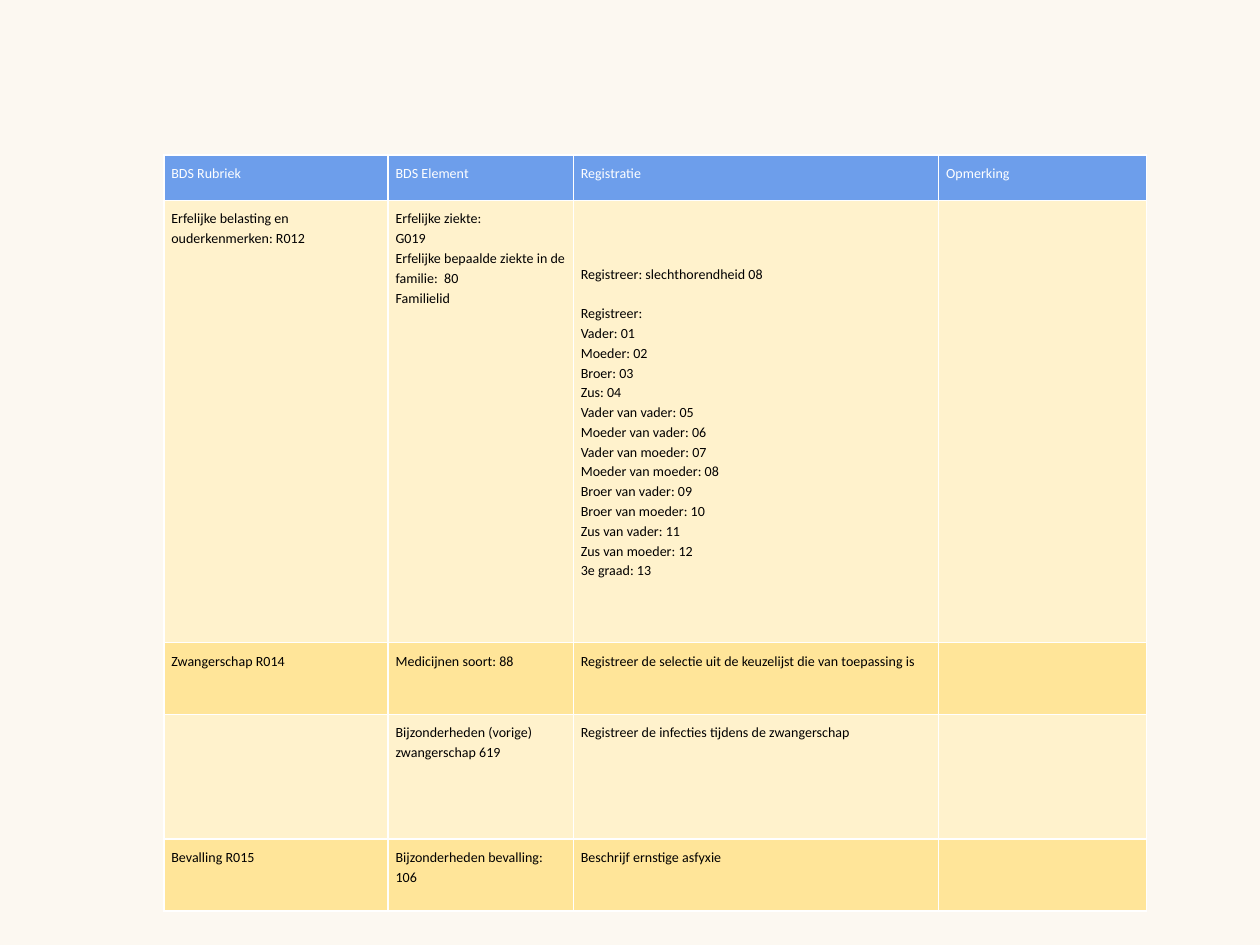
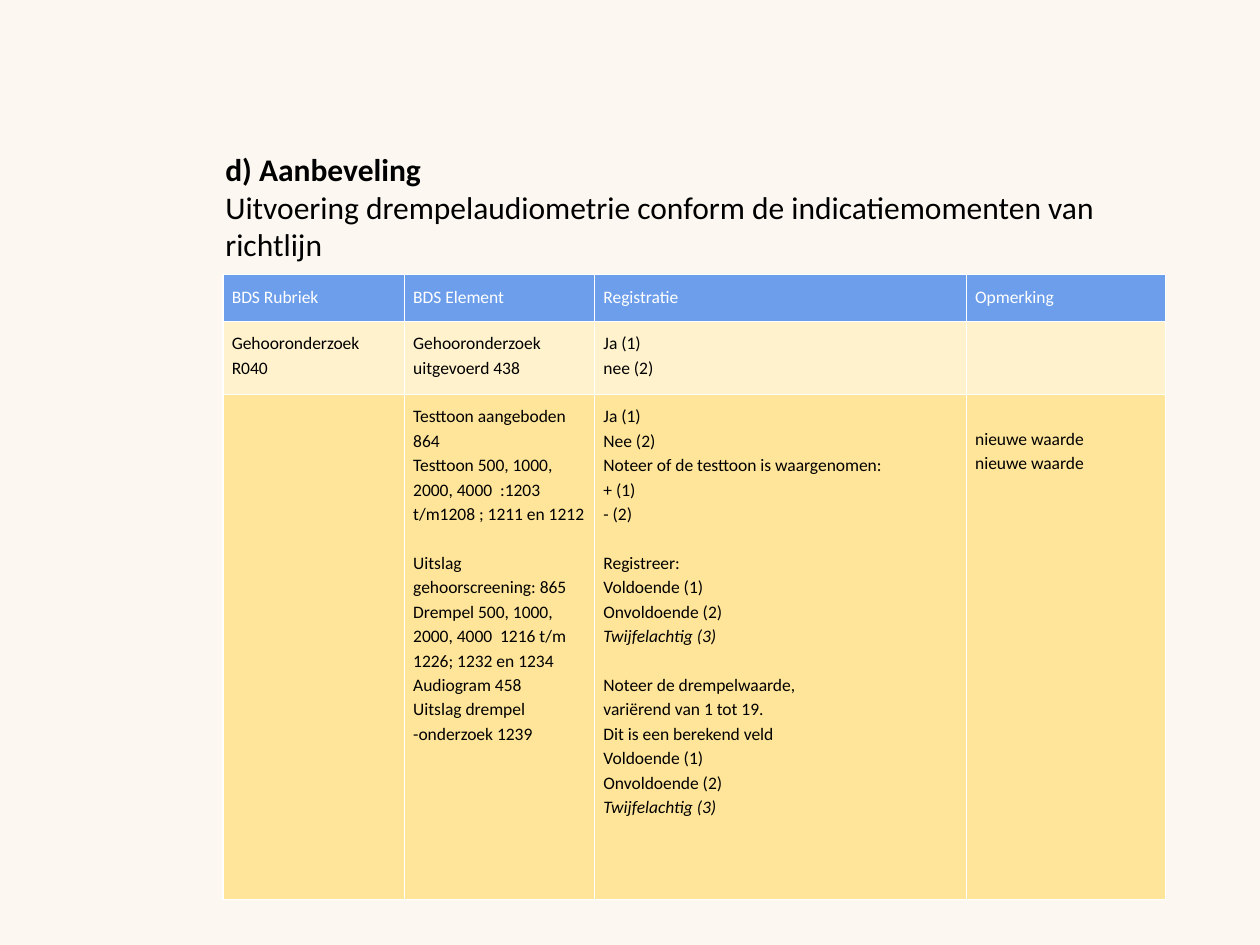
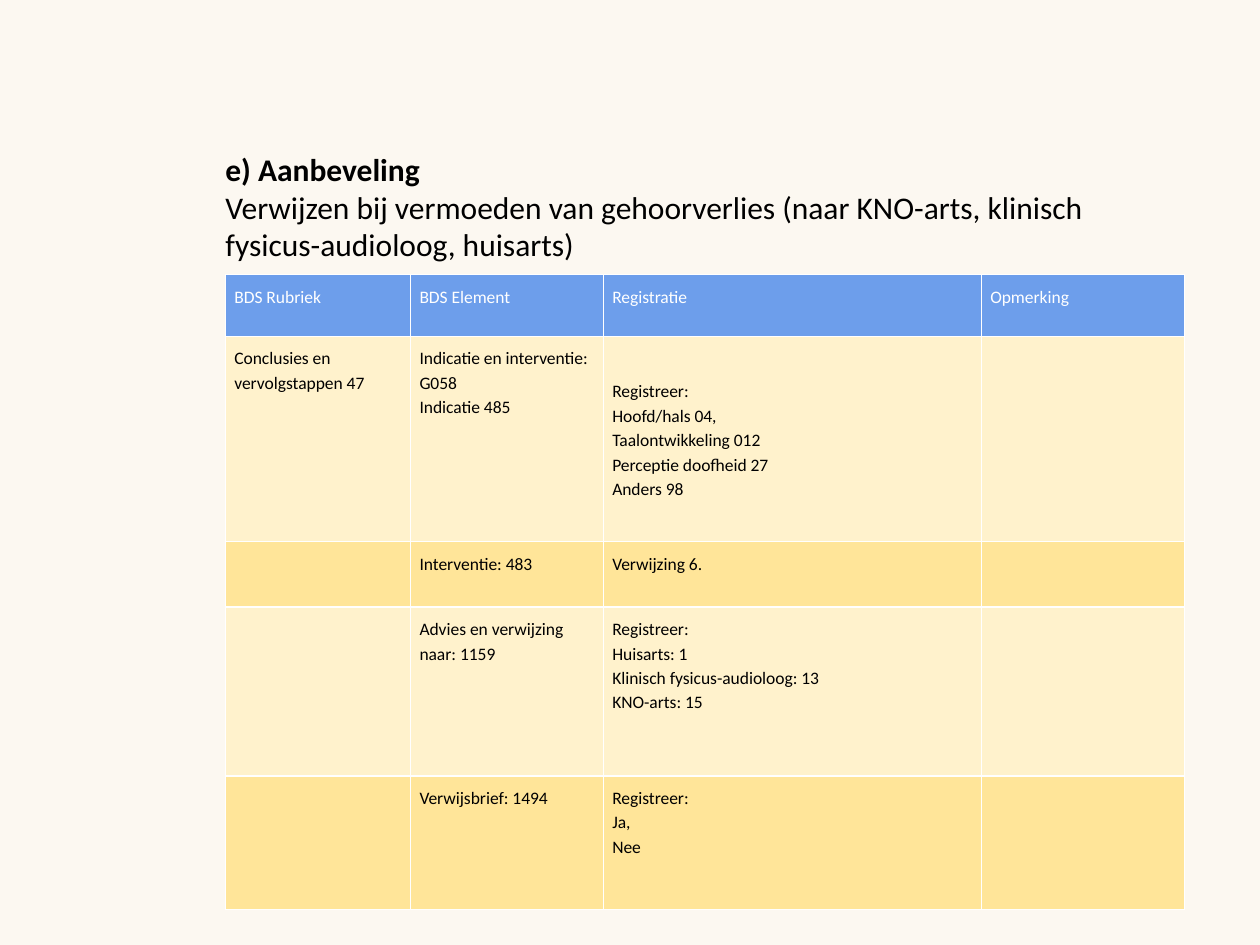
from dataclasses import dataclass

from lxml.etree import SubElement
from pptx import Presentation
from pptx.dml.color import RGBColor as Rgb
from pptx.enum.text import MSO_ANCHOR as Anchor, MSO_AUTO_SIZE as AutoSize
from pptx.oxml.ns import qn
from pptx.util import Inches, Pt


@dataclass(frozen=True)
class Theme:
    """Colours, type sizes and spacing shared by the slides."""
    background: str = "FCF8F1"
    header: str = "6D9EEB"
    bands: tuple = ("FFF2CC", "FFE599")
    border: str = "FFFFFF"
    header_text: str = "FFFFFF"
    text: str = "000000"
    font: str = "Calibri"
    heading_size: int = 18
    small_size: int = 8
    table_size: int = 10
    line_spacing: float = 1.15
    blank_line: float = 1.4


@dataclass(frozen=True)
class Line:
    """A cell line that is italic or stands a blank line below the last."""
    text: str
    gap: bool = False
    italic: bool = False


@dataclass(frozen=True)
class Cell:
    """Cell content that is centred vertically or starts lower down."""
    lines: tuple
    middle: bool = False
    drop: float = 0


THEME = Theme()
COLUMNS = ("BDS Rubriek", "BDS Element", "Registratie", "Opmerking")

HEREDITY_ROWS = (
    ("Erfelijke belasting en ouderkenmerken: R012",
     ("Erfelijke ziekte:", "G019",
      "Erfelijke bepaalde ziekte in de familie:  80", "Familielid"),
     Cell(("Registreer: slechthorendheid 08", Line("Registreer:", gap=True),
           "Vader: 01", "Moeder: 02", "Broer: 03", "Zus: 04",
           "Vader van vader: 05", "Moeder van vader: 06",
           "Vader van moeder: 07", "Moeder van moeder: 08",
           "Broer van vader: 09", "Broer van moeder: 10",
           "Zus van vader: 11", "Zus van moeder: 12", "3e graad: 13"),
          middle=True),
     ""),
    ("Zwangerschap R014", "Medicijnen soort: 88",
     "Registreer de selectie uit de keuzelijst die van toepassing is", ""),
    ("", "Bijzonderheden (vorige) zwangerschap 619",
     "Registreer de infecties tijdens de zwangerschap", ""),
    ("Bevalling R015", "Bijzonderheden bevalling: 106",
     "Beschrijf ernstige asfyxie", ""),
)

VERDICTS = ("Voldoende (1)", "Onvoldoende (2)",
            Line("Twijfelachtig (3)", italic=True))

AUDIOMETRY_ROWS = (
    ("Gehooronderzoek R040", "Gehooronderzoek uitgevoerd 438",
     ("Ja (1)", "nee (2)"), ""),
    ("",
     ("Testtoon aangeboden 864",
      "Testtoon 500, 1000, 2000, 4000  :1203 t/m1208 ; 1211 en 1212",
      Line("Uitslag gehoorscreening: 865", gap=True),
      "Drempel 500, 1000, 2000, 4000  1216 t/m 1226; 1232 en 1234",
      "Audiogram 458", "Uitslag drempel -onderzoek 1239"),
     ("Ja (1)", "Nee (2)", "Noteer of de testtoon is waargenomen:",
      "+ (1)", "- (2)", Line("Registreer:", gap=True), *VERDICTS,
      Line("Noteer de drempelwaarde,", gap=True), "variërend van 1 tot 19.",
      "Dit is een berekend veld", *VERDICTS),
     Cell(("nieuwe waarde", "nieuwe waarde"), drop=0.18)),
)

REFERRAL_ROWS = (
    ("Conclusies en vervolgstappen 47",
     ("Indicatie en interventie: G058", "Indicatie 485"),
     Cell(("Registreer:", "Hoofd/hals 04,", "Taalontwikkeling 012",
           "Perceptie doofheid 27", "Anders 98"), middle=True),
     ""),
    ("", "Interventie: 483", "Verwijzing 6.", ""),
    ("", "Advies en verwijzing naar: 1159",
     ("Registreer:", "Huisarts: 1", "Klinisch fysicus-audioloog: 13",
      "KNO-arts: 15"), ""),
    ("", "Verwijsbrief: 1494", ("Registreer:", "Ja,", "Nee"), ""),
)


def add_run(paragraph, text, size, color, bold=False, italic=False):
    """Add one styled run to a paragraph."""
    run = paragraph.add_run()
    run.text = text
    font = run.font
    font.name, font.size = THEME.font, Pt(size)
    font.bold, font.italic = bold, italic
    font.color.rgb = Rgb.from_string(color)


def next_paragraph(frame, index):
    """Return the first paragraph of a frame, or a new one after it."""
    return frame.add_paragraph() if index else frame.paragraphs[0]


def add_borders(cell):
    """Draw a one-point line on each side of a cell."""
    properties = cell._tc.get_or_add_tcPr()
    for side in ("a:lnL", "a:lnR", "a:lnT", "a:lnB"):
        line = SubElement(properties, qn(side), w=str(Pt(1)))
        fill = SubElement(line, qn("a:solidFill"))
        SubElement(fill, qn("a:srgbClr"), val=THEME.border)


def fill_cell(cell, content, fill, color, size, inset):
    """Give a cell its borders, fill, margins and lines of text."""
    if isinstance(content, str):
        content = (content,)
    if not isinstance(content, Cell):
        content = Cell(content)
    add_borders(cell)
    cell.fill.solid()
    cell.fill.fore_color.rgb = Rgb.from_string(fill)
    cell.margin_left = cell.margin_right = cell.margin_bottom = Inches(inset)
    cell.margin_top = Inches(inset + content.drop)
    cell.vertical_anchor = Anchor.MIDDLE if content.middle else Anchor.TOP
    for index, entry in enumerate(content.lines):
        line = Line(entry) if isinstance(entry, str) else entry
        if not line.text:
            continue
        paragraph = next_paragraph(cell.text_frame, index)
        paragraph.line_spacing = THEME.line_spacing
        if line.gap:
            paragraph.space_before = Pt(size * THEME.blank_line)
        add_run(paragraph, line.text, size, color, italic=line.italic)


def add_registration_table(slide, left, top, widths, heights, rows,
                           size=THEME.table_size, inset=0.07):
    """Add a table with the shared header and alternating row colours."""
    frame = slide.shapes.add_table(
        len(heights), len(widths), Inches(left), Inches(top),
        Inches(sum(widths)), Inches(sum(heights)))
    table = frame.table
    table.horz_banding = False
    for column, width in zip(table.columns, widths):
        column.width = Inches(width)
    for row, height in zip(table.rows, heights):
        row.height = Inches(height)
    for number, contents in enumerate((COLUMNS, *rows)):
        fill = THEME.bands[(number - 1) % 2] if number else THEME.header
        color = THEME.text if number else THEME.header_text
        for cell, content in zip(table.rows[number].cells, contents):
            fill_cell(cell, content, fill, color, size, inset)


def add_recommendation(slide, letter, advice, width, height):
    """Add the lettered heading with its recommendation."""
    box = slide.shapes.add_textbox(
        Inches(1.69), Inches(1.14), Inches(width), Inches(height))
    frame = box.text_frame
    frame.word_wrap = True
    frame.auto_size = AutoSize.SHAPE_TO_FIT_TEXT
    for index, text in enumerate((f"{letter}) Aanbeveling", advice)):
        add_run(next_paragraph(frame, index), text, THEME.heading_size,
                THEME.text, bold=index == 0)


def main():
    """Build the three slides and save them."""
    deck = Presentation()
    deck.slide_width, deck.slide_height = Inches(10), Inches(7.5)
    backdrop = deck.slide_master.background.fill
    backdrop.solid()
    backdrop.fore_color.rgb = Rgb.from_string(THEME.background)
    blank = deck.slide_layouts[6]

    heredity = deck.slides.add_slide(blank)
    add_registration_table(
        heredity, 1.3, 1.23, (1.78, 1.47, 2.9, 1.65),
        (0.36, 3.51, 0.57, 0.99, 0.57), HEREDITY_ROWS,
        THEME.small_size, 0.06)

    audiometry = deck.slides.add_slide(blank)
    add_registration_table(
        audiometry, 1.77, 2.18, (1.44, 1.51, 2.95, 1.58),
        (0.37, 0.58, 4.01), AUDIOMETRY_ROWS)
    add_recommendation(
        audiometry, "d",
        "Uitvoering drempelaudiometrie conform de indicatiemomenten van "
        "richtlijn", 7.8, 1.01)

    referral = deck.slides.add_slide(blank)
    add_registration_table(
        referral, 1.79, 2.18, (1.47, 1.53, 3, 1.61),
        (0.49, 1.63, 0.52, 1.34, 1.06), REFERRAL_ROWS)
    add_recommendation(
        referral, "e",
        "Verwijzen bij vermoeden van gehoorverlies (naar KNO-arts, klinisch "
        "fysicus-audioloog, huisarts)", 7.64, 1.28)

    deck.save("out.pptx")


if __name__ == "__main__":
    main()
